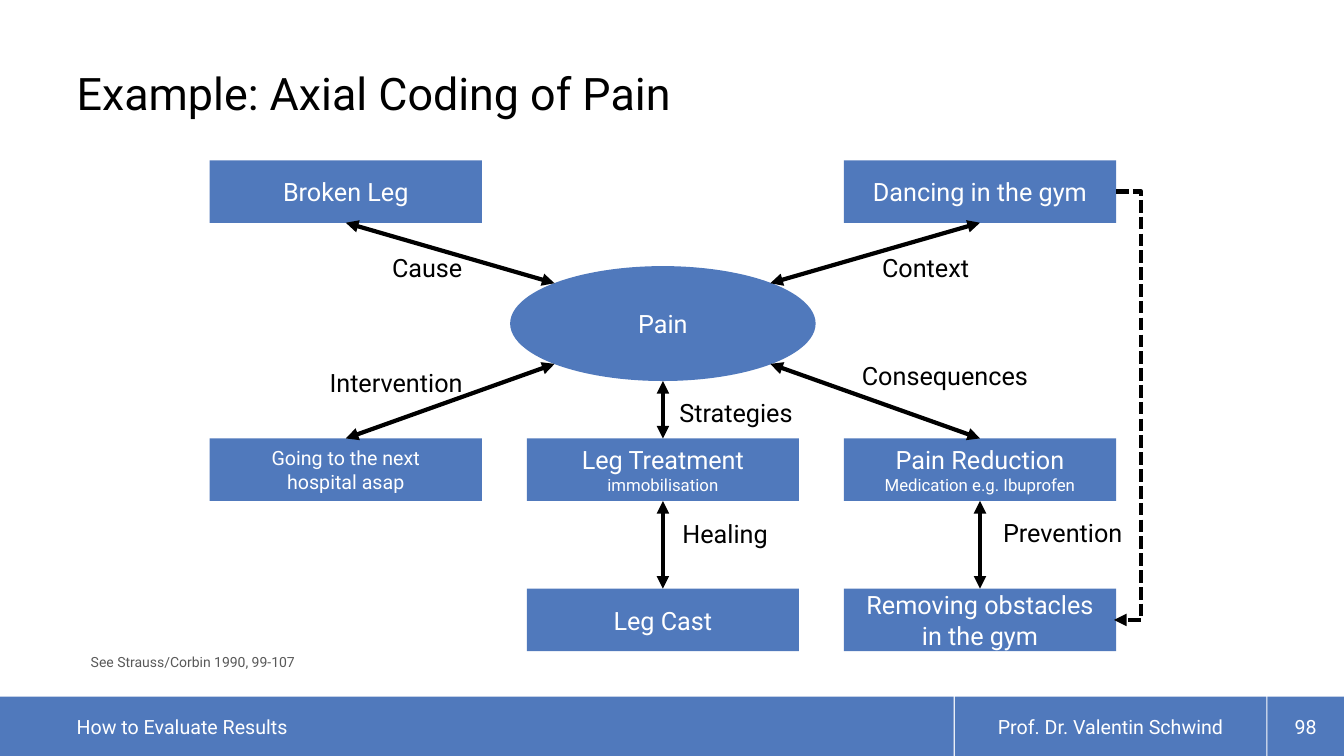
from copy import deepcopy

from lxml.etree import SubElement
from pptx import Presentation
from pptx.dml.color import RGBColor
from pptx.enum.dml import MSO_LINE
from pptx.enum.shapes import MSO_CONNECTOR as LINK, MSO_SHAPE as SHAPE
from pptx.enum.text import MSO_ANCHOR as ANCHOR, MSO_AUTO_SIZE as FIT, PP_ALIGN as ALIGN
from pptx.oxml.ns import qn
from pptx.util import Inches, Pt

WIDTH, HEIGHT = 13.33, 7.5
BLUE, WHITE, BLACK, GREY = "5079BC", "FFFFFF", "000000", "595959"
FONT = "Roboto"
MARGIN, BAR_TOP, BAR_HEIGHT = 0.76, 6.91, 0.59
BOX_WIDTH, BOX_HEIGHT = 2.7, 0.62
LEFT, MIDDLE, RIGHT = (2.08 + 3.145 * column for column in range(3))
TOP_ROW, CENTRE_ROW, LOW_ROW = 1.59, 4.35, 5.84
PAIN = (5.06, 2.64, 3.03, 1.14)


def paint(color_format, value):
    """Set a colour format from a hex string."""
    color_format.rgb = RGBColor.from_string(value)


def write(shape, text, sizes, color, align=ALIGN.LEFT, anchor=ANCHOR.MIDDLE):
    """Fill a shape with one paragraph; each line takes its own size."""
    frame = shape.text_frame
    frame.text = text
    frame.vertical_anchor = anchor
    para = frame.paragraphs[0]
    para.alignment = align
    for span, size in zip(para.runs, sizes):
        span.font.name = FONT
        span.font.size = Pt(size)
        paint(span.font.color, color)
    for line_break in para._p.findall(qn("a:br")):
        line_break.append(deepcopy(para.runs[0]._r.rPr))
    return frame


def inset(frame, left=0, right=0):
    """Set the side margins of a frame and clear the upper and lower ones."""
    frame.margin_left, frame.margin_right = Inches(left), Inches(right)
    frame.margin_top = frame.margin_bottom = 0


def fill_placeholder(holder, place, text, size, color, anchor, indent=0):
    """Move a placeholder and set its unbulleted text."""
    holder.left, holder.top, holder.width, holder.height = map(Inches, place)
    frame = write(holder, text, [size], color, anchor=anchor)
    frame.auto_size = FIT.NONE
    frame.word_wrap = True
    para = frame.paragraphs[0]
    para.space_before = Pt(0)
    properties = para._p.get_or_add_pPr()
    properties.set("marL", str(Inches(indent)))
    properties.set("indent", "0")
    SubElement(properties, qn("a:buNone"))
    return frame


def add_block(page, kind, place, text, *sizes):
    """Add a blue shape with centred white text."""
    block = page.shapes.add_shape(kind, *map(Inches, place))
    block.shadow.inherit = False
    block.fill.solid()
    paint(block.fill.fore_color, BLUE)
    block.line.fill.background()
    write(block, text, sizes, WHITE, ALIGN.CENTER)
    return block


def add_label(page, left, top, width, text):
    """Add the name of a relation beside its arrow."""
    label = page.shapes.add_textbox(*map(Inches, (left, top, width, 0.4)))
    frame = write(label, text, [18], BLACK, anchor=ANCHOR.TOP)
    frame.word_wrap = False
    frame.auto_size = FIT.SHAPE_TO_FIT_TEXT


def add_arrow(page, start, end, kind=LINK.STRAIGHT, heads=("headEnd", "tailEnd")):
    """Add a black line with the given arrowheads."""
    arrow = page.shapes.add_connector(kind, *map(Inches, (*start, *end)))
    paint(arrow.line.color, BLACK)
    arrow.line.width = Pt(3)
    SubElement(arrow._element.spPr, qn("a:effectLst"))
    for head in heads:
        SubElement(arrow.line._get_or_add_ln(), qn(f"a:{head}"), type="triangle")
    return arrow


def add_detour(page, start, end, reach):
    """Add a dashed elbow arrow that swings out to the right by reach."""
    arrow = add_arrow(page, start, end, LINK.ELBOW, ["tailEnd"])
    arrow.line.dash_style = MSO_LINE.SQUARE_DOT
    ratio = -reach / (start[0] - end[0])
    guides = arrow._element.spPr.find(qn("a:prstGeom")).get_or_add_avLst()
    SubElement(guides, qn("a:gd"), name="adj1", fmla=f"val {round(ratio * 100000)}")


def add_frame(page):
    """Add the title, the citation and the footer bar."""
    title, footer, citation = page.placeholders
    frame = fill_placeholder(title, (MARGIN, 0.13, 11.81, 1.06),
                             "Example: Axial Coding of Pain", 32, BLACK, ANCHOR.BOTTOM)
    inset(frame)
    frame.paragraphs[0].line_spacing = 0.9
    frame = fill_placeholder(footer, (MARGIN, BAR_TOP, 8.7, BAR_HEIGHT),
                             "How to Evaluate Results", 14, WHITE, ANCHOR.MIDDLE)
    inset(frame, right=0.2)
    fill_placeholder(citation, (MARGIN, 6.02, 11.81, 0.68),
                     "See Strauss/Corbin 1990, 99-107", 10, GREY, ANCHOR.BOTTOM, 0.04)
    for left, right, text in ((0, 9.46, ""), (9.47, 12.56, "Prof. Dr. Valentin Schwind"),
                              (12.57, WIDTH, "98")):
        place = (left, BAR_TOP, right - left, BAR_HEIGHT)
        bar = add_block(page, SHAPE.RECTANGLE, place, text, 14)
        inset(bar.text_frame)
        page.shapes._spTree.insert(2, bar._element)


def add_diagram(page):
    """Add the concepts around pain and the relations between them."""
    for left, top, text, *sizes in (
        (LEFT, TOP_ROW, "Broken Leg", 18),
        (RIGHT, TOP_ROW, "Dancing in the gym", 18),
        (LEFT, CENTRE_ROW, "Going to the next\vhospital asap", 14, 14),
        (MIDDLE, CENTRE_ROW, "Leg Treatment\vimmobilisation", 18, 12),
        (RIGHT, CENTRE_ROW, "Pain Reduction\vMedication e.g. Ibuprofen", 18, 12),
        (MIDDLE, LOW_ROW, "Leg Cast", 18),
        (RIGHT, LOW_ROW, "Removing obstacles\vin the gym", 18, 18),
    ):
        add_block(page, SHAPE.RECTANGLE, (left, top, BOX_WIDTH, BOX_HEIGHT), text, *sizes)
    add_block(page, SHAPE.OVAL, PAIN, "Pain", 18)

    left_axis, middle_axis, right_axis = (x + BOX_WIDTH / 2 for x in (LEFT, MIDDLE, RIGHT))
    for axis, rim in ((left_axis, 5.5), (right_axis, 7.64)):
        add_arrow(page, (axis, TOP_ROW + BOX_HEIGHT), (rim, 2.81))
        add_arrow(page, (axis, CENTRE_ROW), (rim, 3.61))
    add_arrow(page, (middle_axis, CENTRE_ROW), (middle_axis, PAIN[1] + PAIN[3]))
    for axis in (middle_axis, right_axis):
        add_arrow(page, (axis, CENTRE_ROW + BOX_HEIGHT), (axis, LOW_ROW))
    edge = RIGHT + BOX_WIDTH
    add_detour(page, (edge, TOP_ROW + BOX_HEIGHT / 2),
               (edge - 0.02, LOW_ROW + BOX_HEIGHT / 2), 0.25)

    for label in ((3.79, 2.45, 0.9, "Cause"), (8.65, 2.45, 1.07, "Context"),
                  (3.17, 3.59, 1.53, "Intervention"), (8.45, 3.53, 1.86, "Consequences"),
                  (6.64, 3.89, 1.34, "Strategies"), (6.67, 5.09, 1.06, "Healing"),
                  (9.85, 5.08, 1.4, "Prevention")):
        add_label(page, *label)


def main():
    """Build the slide and save it."""
    deck = Presentation()
    deck.slide_width, deck.slide_height = Inches(WIDTH), Inches(HEIGHT)
    page = deck.slides.add_slide(deck.slide_layouts[3])
    add_frame(page)
    add_diagram(page)
    deck.save("out.pptx")


if __name__ == "__main__":
    main()
